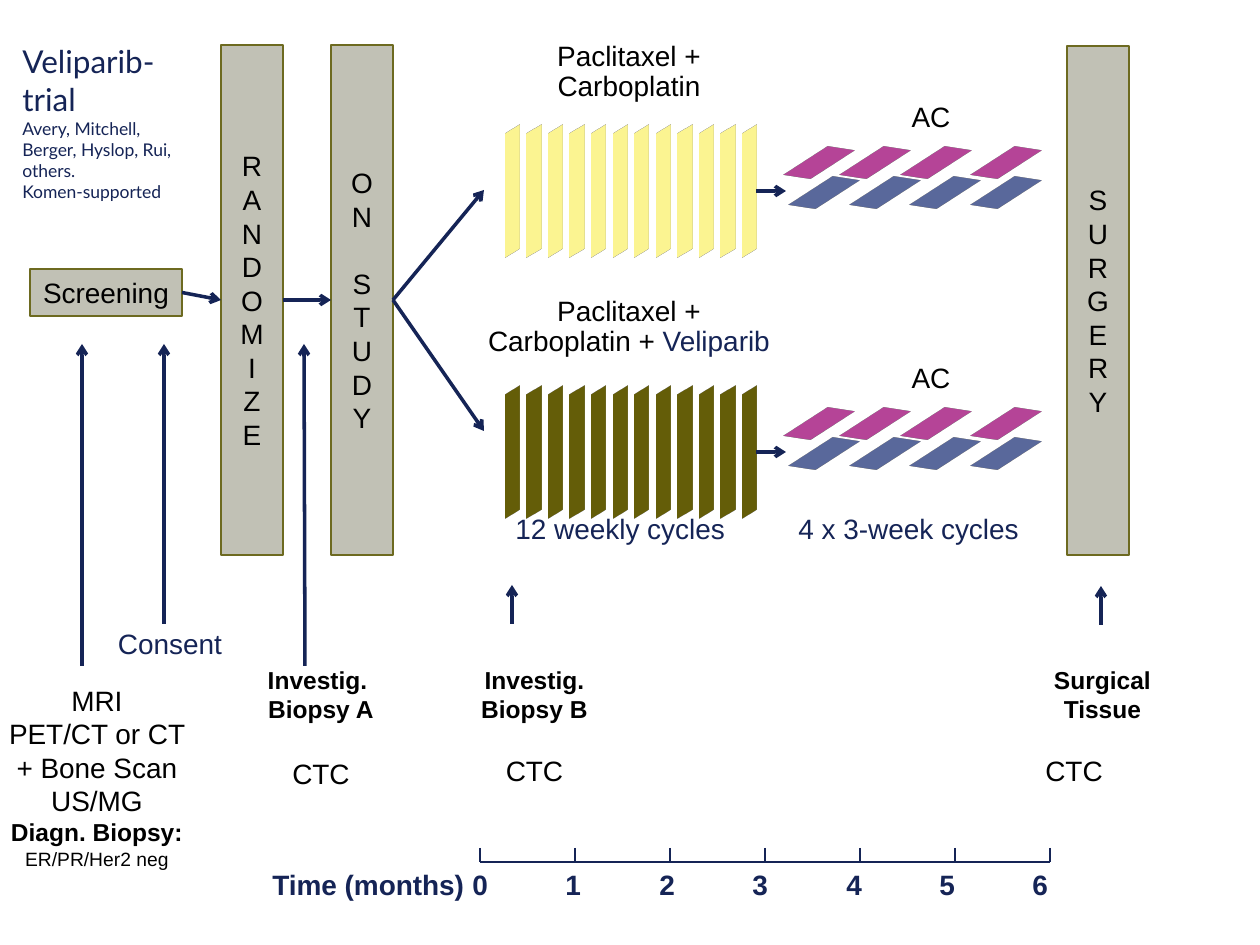
from lxml.etree import SubElement
from pptx import Presentation
from pptx.dml.color import RGBColor
from pptx.enum.shapes import MSO_CONNECTOR, MSO_SHAPE
from pptx.enum.text import MSO_ANCHOR, PP_ALIGN
from pptx.oxml.ns import qn
from pptx.util import Pt

SCALE = 914400 / 126
COLORS = {
    "black": "000000", "navy": "152456", "gray": "C1C1B5", "olive": "6D6A20",
    "yellow": "F7F08E", "dark olive": "625B07", "purple": "700052",
}
FONT = {"name": "Arial", "size": Pt(16), "bold": False}
BOLD = {"bold": True}
SMALL_BOLD = {"size": Pt(14), "bold": True}
NAVY = {"color": "navy"}
CENTER = {"alignment": PP_ALIGN.CENTER}
HEADING = CENTER | {"line_spacing": Pt(17)}
TIGHT = {"line_spacing": Pt(13)}


def px(value):
    return round(value * SCALE)


def color(name):
    return RGBColor.from_string(COLORS[name])


def set_values(target, values):
    for name, value in values.items():
        setattr(target, name, value)


def line(text, paragraph_format=CENTER, **font):
    return [(text, font)], paragraph_format


def fill_text(shape, lines, **frame_format):
    frame = shape.text_frame
    set_values(frame, {"word_wrap": True} | frame_format)
    for index, (runs, paragraph_format) in enumerate(lines):
        paragraph = frame.add_paragraph() if index else frame.paragraphs[0]
        set_values(paragraph, paragraph_format)
        for text, font in runs:
            run = paragraph.add_run()
            run.text = text
            values = FONT | {"color": "black"} | font
            run.font.color.rgb = color(values.pop("color"))
            set_values(run.font, values)


def add_text(slide, box, lines, **frame_format):
    shape = slide.shapes.add_textbox(*map(px, box))
    fill_text(shape, lines, **frame_format)


def add_rectangle(slide, box, fill):
    shape = slide.shapes.add_shape(MSO_SHAPE.RECTANGLE, *map(px, box))
    shape.shadow.inherit = False
    shape.fill.solid()
    shape.fill.fore_color.rgb = color(fill)
    shape.line.fill.background()
    return shape


def add_panel(slide, box, text, vertical=True):
    shape = add_rectangle(slide, box, "gray")
    shape.line.color.rgb = color("olive")
    shape.line.width = Pt(1)
    fill_text(shape, [line(text)], vertical_anchor=MSO_ANCHOR.MIDDLE)
    if vertical:
        shape.text_frame._txBody.bodyPr.set("vert", "wordArtVert")
    return shape


def add_tilted_card(slide, box, fill, camera):
    properties = add_rectangle(slide, box, fill)._element.spPr
    scene = SubElement(properties, qn("a:scene3d"))
    SubElement(scene, qn("a:camera"), prst=camera)
    SubElement(scene, qn("a:lightRig"), rig="threePt", dir="t")


def add_line(slide, start, end, width=2, arrow=True, source=None, target=None):
    connector = slide.shapes.add_connector(
        MSO_CONNECTOR.STRAIGHT, *map(px, (*start, *end)))
    connector.line.color.rgb = color("navy")
    connector.line.width = Pt(width)
    if arrow:
        SubElement(connector.line._get_or_add_ln(), qn("a:tailEnd"), type="arrow")
    SubElement(connector._element.spPr, qn("a:effectLst"))
    if source:
        connector.begin_connect(source, 3)
    if target:
        connector.end_connect(target, 1)


def add_trial_title(slide, box):
    small = {"name": "Lato", "size": Pt(10), "color": "navy"}
    add_text(slide, box, [
        line("Veliparib-trial", {}, **small | {"size": Pt(18)}),
        line("Avery, Mitchell, Berger, Hyslop, Rui, others.", {}, **small),
        line("Komen-supported", {}, **small),
    ])


def add_entry(slide, box):
    left, top, width, height = box
    screening = add_panel(slide, (left, top + 224, 152, 47), "Screening", vertical=False)
    randomize = add_panel(slide, (left + 191, top, 62, height), "RANDOMIZE")
    study = add_panel(slide, (left + width - 62, top, 62, height), "ON STUDY")
    middle = top + height // 2
    for source, target in ((screening, randomize), (randomize, study)):
        add_line(slide, (left, middle), (left + width, middle),
                 source=source, target=target)
    for tip in (190, 431):
        add_line(slide, (left + width, middle), (484, tip), source=study)


def add_arm(slide, box, heading, bar_color):
    left, top, width, height = box
    bottom = top + height
    add_text(slide, (left, top, 338, 73), heading)
    add_text(slide, (left + 348, bottom - 153, 246, 35), [line("AC", CENTER | TIGHT)])
    for index in range(12):
        x = left + 36 + index * 21.55
        add_tilted_card(slide, (x, bottom - 131, 33, 130), bar_color,
                        "isometricOffAxis2Right")
    rows = (("navy", 349, 114, (0, 61, 121, 182)), ("purple", 344, 144, (0, 56, 117, 187)))
    for fill, start, rise, offsets in rows:
        for offset in offsets:
            add_tilted_card(slide, (left + start + offset, bottom - rise, 30, 100),
                            fill, "isometricOffAxis2Top")
    add_line(slide, (left + 296, bottom - 66), (left + 326, bottom - 66))


def add_workup(slide, box):
    left, top, width, height = box
    add_line(slide, (left + 92, top - 11), (left + 92, 344))
    add_line(slide, (left + 174, top - 53), (left + 174, 344))
    add_text(slide, (left + 110, top - 57, 140, 47), [line("Consent", **NAVY)])
    diagnosis = [("Diagn. Biopsy: ", SMALL_BOLD), ("ER/PR/Her2 neg", {"size": Pt(11)})]
    add_text(slide, box, [line("MRI"), line("PET/CT or CT + Bone Scan"),
                          line("US/MG"), (diagnosis, CENTER)])


def add_sample(slide, box, labels, gap, arrow, alignment=PP_ALIGN.CENTER):
    add_line(slide, *arrow)
    ctc_format = {"alignment": alignment, "space_before": Pt(gap)}
    add_text(slide, box, [line(label, **SMALL_BOLD) for label in labels]
             + [line("CTC", ctc_format)], margin_top=px(40))


def add_timeline(slide, box):
    left, top, width, height = box
    base = top + height
    add_line(slide, (left, base), (left + width, base), 1, False)
    for month in range(7):
        x = left + month * width // 6
        add_line(slide, (x, top), (x, base), 1, False)
        label_left = left - 20 + round(month * 93.4)
        add_text(slide, (label_left, base - 1, 42, 47),
                 [line(str(month), {}, **BOLD, **NAVY)], word_wrap=False)
    add_text(slide, (left - 220, base + 10, 220, 35),
             [line("Time (months)", TIGHT, **BOLD, **NAVY)], word_wrap=False)


def main():
    presentation = Presentation()
    set_values(presentation, {"slide_width": px(1260), "slide_height": px(945)})
    slide = presentation.slides.add_slide(presentation.slide_layouts[6])
    add_trial_title(slide, (10, 36, 200, 174))
    add_entry(slide, (30, 45, 363, 510))
    paclitaxel = line("Paclitaxel +", HEADING)
    combination = [("Carboplatin + ", {}), ("Veliparib", NAVY)], HEADING
    add_arm(slide, (460, 36, 582, 221),
            [paclitaxel, line("Carboplatin", HEADING)], "yellow")
    add_arm(slide, (460, 291, 582, 227), [paclitaxel, combination], "dark olive")
    for left, width, caption in ((503, 237, "12 weekly cycles"),
                                 (786, 248, "4 x 3-week cycles")):
        add_text(slide, (left, 505, width, 47), [line(caption, {}, **NAVY)],
                 word_wrap=False)
    add_panel(slide, (1067, 46, 62, 509), "SURGERY")
    add_workup(slide, (-10, 677, 214, 202))
    add_sample(slide, (202, 625, 238, 174), ["Investig. ", "Biopsy A"], 19,
               ((305, 666), (304, 344)))
    add_sample(slide, (410, 625, 249, 170), ["Investig.", "Biopsy B"], 17,
               ((512, 624), (512, 585)))
    add_sample(slide, (1033, 625, 139, 170), ["Surgical Tissue"], 17,
               ((1101, 625), (1101, 586)), PP_ALIGN.LEFT)
    add_timeline(slide, (480, 848, 570, 14))
    presentation.save("out.pptx")


if __name__ == "__main__":
    main()
